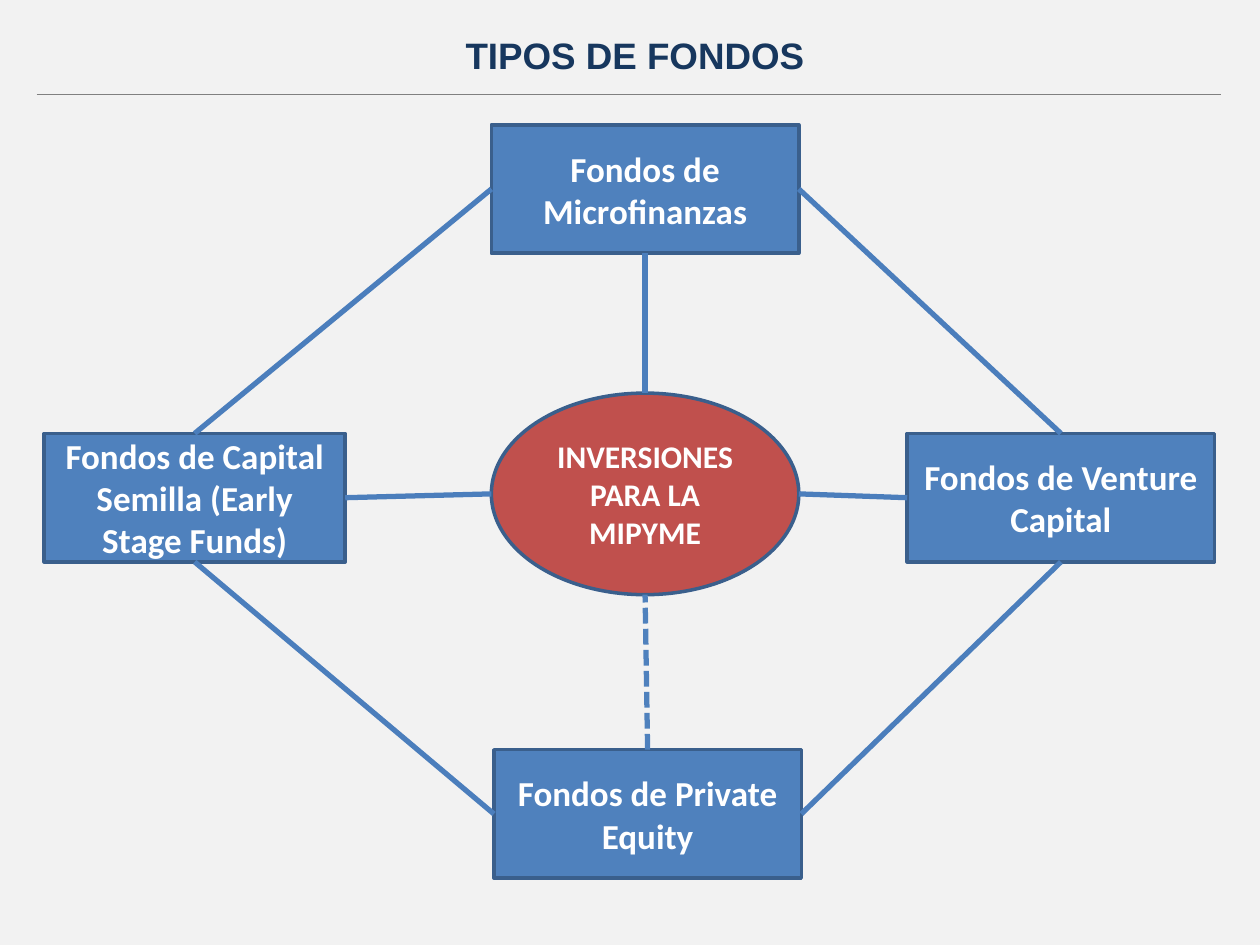
from dataclasses import dataclass

from lxml import etree
from pptx import Presentation
from pptx.dml.color import RGBColor
from pptx.enum.dml import MSO_LINE
from pptx.enum.shapes import MSO_CONNECTOR, MSO_SHAPE
from pptx.enum.text import MSO_ANCHOR, PP_ALIGN
from pptx.oxml.ns import qn
from pptx.util import Inches, Pt

RECTANGLE, OVAL = MSO_SHAPE.RECTANGLE, MSO_SHAPE.OVAL
STRAIGHT = MSO_CONNECTOR.STRAIGHT
DASH = MSO_LINE.SQUARE_DOT
CENTER, MIDDLE = PP_ALIGN.CENTER, MSO_ANCHOR.MIDDLE


@dataclass(frozen=True)
class Theme:
    background: str = "F2F2F2"
    title: str = "17375E"
    rule: str = "808080"
    fund: str = "4F81BD"
    hub: str = "C0504D"
    outline: str = "3A5F8C"
    link: str = "4B7EBC"
    label: str = "FFFFFF"
    title_font: str = "Arial"
    label_font: str = "Calibri"
    title_size: float = 21
    fund_size: float = 20
    hub_size: float = 18
    rule_width: float = 0.75
    outline_width: float = 2
    link_width: float = 3


THEME = Theme()

# Places are in cells of a grid of 100 columns by 75 rows.
COLUMNS, ROWS = 100, 75
CELL = Inches(10) / COLUMNS

TITLE = "TIPOS DE FONDOS"
TITLE_BOX = (0.4, 2.1, 100, 4.5)
RULE = ((2.9, 7.5), (96.9, 7.5))

BOX_WIDTH, BOX_HEIGHT = 24.4, 10.2
MIDDLE_ROW = 34.4
NODES = {
    "micro": ("Fondos de Microfinanzas", (39, 9.9, BOX_WIDTH, BOX_HEIGHT)),
    "seed": ("Fondos de Capital Semilla (Early Stage Funds)",
             (3.5, MIDDLE_ROW, 23.9, BOX_HEIGHT)),
    "venture": ("Fondos de Venture Capital",
                (72, MIDDLE_ROW, BOX_WIDTH, BOX_HEIGHT)),
    "equity": ("Fondos de Private Equity", (39.2, 59.5, BOX_WIDTH, BOX_HEIGHT)),
    "hub": ("INVERSIONES PARA LA MIPYME", (39, 31.2, BOX_WIDTH, 16)),
}

# Each link joins the side of one node to the side of another.
LINKS = [
    ("seed", "top", "micro", "left"),
    ("equity", "right", "venture", "bottom"),
    ("micro", "right", "venture", "top"),
    ("seed", "bottom", "equity", "left"),
    ("hub", "right", "venture", "left"),
    ("seed", "right", "hub", "left"),
    ("hub", "top", "micro", "bottom"),
]
DASHED_LINK = ("equity", "top", "hub", "bottom")

SIDES = {"top": (0.5, 0), "left": (0, 0.5), "bottom": (0.5, 1), "right": (1, 0.5)}


def to_emu(cells):
    return [round(value * CELL) for value in cells]


def color(code):
    return RGBColor.from_string(code)


def write(shape, text, font_name, size, font_color):
    frame = shape.text_frame
    frame.word_wrap = True
    frame.text = text
    paragraph = frame.paragraphs[0]
    paragraph.alignment = CENTER
    font = paragraph.runs[0].font
    font.name, font.size, font.bold = font_name, Pt(size), True
    font.color.rgb = color(font_color)


def add_node(slide, name):
    text, box = NODES[name]
    is_hub = name == "hub"
    shape = slide.shapes.add_shape(OVAL if is_hub else RECTANGLE, *to_emu(box))
    shape.shadow.inherit = False
    shape.fill.solid()
    shape.fill.fore_color.rgb = color(THEME.hub if is_hub else THEME.fund)
    shape.line.color.rgb = color(THEME.outline)
    shape.line.width = Pt(THEME.outline_width)
    shape.text_frame.vertical_anchor = MIDDLE
    size = THEME.hub_size if is_hub else THEME.fund_size
    write(shape, text, THEME.label_font, size, THEME.label)


def add_line(slide, start, end, line_color, width):
    connector = slide.shapes.add_connector(STRAIGHT, *to_emu(start + end))
    connector.line.color.rgb = color(line_color)
    connector.line.width = Pt(width)
    etree.SubElement(connector._element.spPr, qn("a:effectLst"))
    return connector


def side_point(name, side):
    left, top, width, height = NODES[name][1]
    across, down = SIDES[side]
    return left + across * width, top + down * height


def add_link(slide, link, line_color):
    first, first_side, second, second_side = link
    return add_line(slide, side_point(first, first_side),
                    side_point(second, second_side), line_color, THEME.link_width)


def main():
    presentation = Presentation()
    presentation.slide_width, presentation.slide_height = to_emu((COLUMNS, ROWS))
    slide = presentation.slides.add_slide(presentation.slide_layouts[6])
    slide.background.fill.solid()
    slide.background.fill.fore_color.rgb = color(THEME.background)

    add_line(slide, *RULE, THEME.rule, THEME.rule_width)
    title = slide.shapes.add_textbox(*to_emu(TITLE_BOX))
    write(title, TITLE, THEME.title_font, THEME.title_size, THEME.title)

    for name in NODES:
        add_node(slide, name)
    for link in LINKS:
        add_link(slide, link, THEME.link)
    add_link(slide, DASHED_LINK, THEME.fund).line.dash_style = DASH

    presentation.save("out.pptx")


if __name__ == "__main__":
    main()
